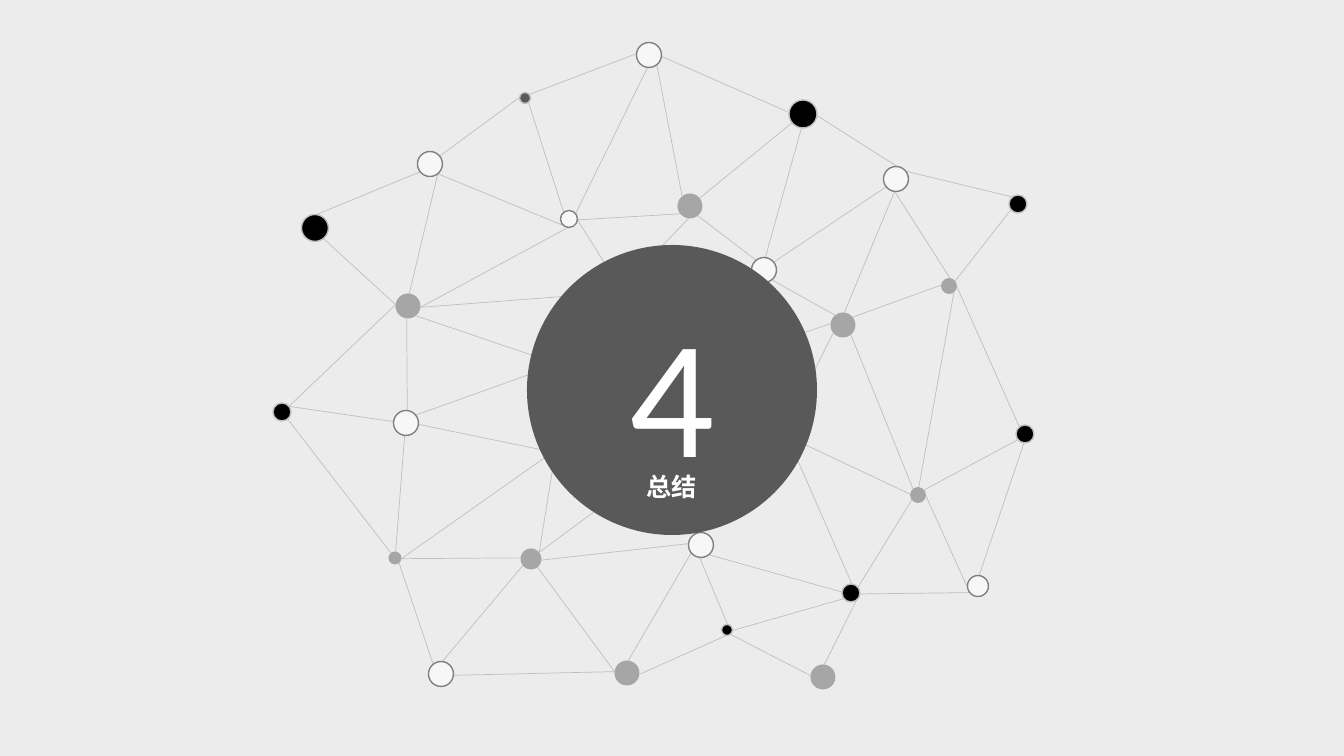
"""Build the closing section slide: a numbered disc over a network of dots."""
from dataclasses import dataclass
from math import cos, radians, sin

from lxml.etree import SubElement
from pptx import Presentation
from pptx.dml.color import RGBColor
from pptx.enum.shapes import MSO_CONNECTOR, MSO_SHAPE
from pptx.enum.text import MSO_ANCHOR, MSO_AUTO_SIZE, PP_ALIGN
from pptx.oxml.ns import qn
from pptx.util import Emu, Pt

NUMBER, TITLE = "4", "总结"
PAGE_SIZE = (1344, 756)
DISC = (672, 390, 290)
TITLE_BOX = (637, 466, 70, 40)

DOTS = {
    "A": (649, 55, 25, "white"), "B": (803, 114, 28, "black"),
    "C": (896, 179, 25, "white"), "D": (1018, 204, 18, "black"),
    "E": (1025, 434, 18, "black"), "F": (978, 586, 21, "white"),
    "G": (823, 677, 25, "grey"), "H": (727, 630, 11, "black"),
    "I": (627, 673, 25, "grey"), "J": (441, 674, 25, "white"),
    "K": (395, 558, 13, "grey"), "L": (282, 412, 18, "black"),
    "M": (315, 228, 27, "black"), "N": (430, 164, 25, "white"),
    "O": (525, 98, 11, "dark"), "P": (690, 206, 25, "grey"),
    "Q": (764, 270, 25, "white"), "R": (843, 325, 25, "grey"),
    "S": (949, 286, 16, "grey"), "T": (918, 495, 16, "grey"),
    "U": (851, 593, 18, "black"), "V": (701, 545, 25, "white"),
    "W": (531, 559, 21, "grey"), "X": (406, 423, 25, "white"),
    "Y": (408, 306, 25, "grey"), "Z": (569, 219, 17, "white"),
}
ANCHORS_UNDER_DISC = {
    "a": (621, 287, 18), "b": (785, 440, 27), "c": (627, 487, 18),
    "d": (561, 453, 17), "e": (546, 363, 11), "f": (686, 367, 25),
}
LINKS = [
    "L SE K NW", "K N X S", "X NE e SE", "W NE d SW", "T NW R SE",
    "K E W W", "c SW W NE", "S SE T N", "E S F N", "F SW T E",
    "M SE Y W", "N NE O W", "R NW Q SE", "Z E a NW", "A S Z NE",
    "B W A E", "B S Q N", "C N B E", "M N N SW", "A W O NE",
    "O SE Z NW", "C NE D NW", "S NE D SW", "C S S N", "E SW T NE",
    "J E I W", "J N W SW", "J NW K SE", "b SE U N", "b E T W",
    "T SW U NE", "F SW U E", "G N U SE", "W E V W", "H N V S",
    "H E U SW", "V SE U W", "I W W SE", "X E d W", "L NE X W",
    "Y S X N", "Y SE e NW", "N SE Y N", "N SE Z S", "L NE Y W",
    "Y E Z S", "Y E a SW", "B SW P NE", "A SE P NW", "Z E P SW",
    "a NE P S", "Q NW P SE", "C SW Q NE", "S W R NE", "C S R N",
    "R SW b N", "f E R W", "I N V SW", "I E H S", "H SE G W",
    "d W K E", "S E E NW",
]
SIDES = ["E", "SE", "S", "SW", "W", "NW", "N", "NE"]
TILT = 6.2


@dataclass(frozen=True)
class Theme:
    """Colours, line widths and type of the slide."""
    back: str = "ECECEC"
    disc: str = "595959"
    text: str = "FFFFFF"
    link: str = "BFBFBF"
    rim: str = "808080"
    white: str = "F7F7F7"
    black: str = "000000"
    grey: str = "A6A6A6"
    dark: str = "595959"
    link_width: float = 0.5
    rim_width: float = 1
    number_font: str = "Calibri"
    title_font: str = "Arial"
    number_size: int = 120
    title_size: int = 18


THEME = Theme()
RIMS = {"white": THEME.rim, "black": THEME.link, "dark": THEME.link, "grey": None}


def px(value):
    return Emu(round(value * 12192000 / PAGE_SIZE[0]))


def color(code):
    return RGBColor.from_string(code)


def write(shape, text, *, font, size, bold, anchor):
    frame = shape.text_frame
    frame.auto_size = MSO_AUTO_SIZE.NONE
    frame.word_wrap = False
    frame.margin_left = frame.margin_right = 0
    frame.vertical_anchor = anchor
    para = frame.paragraphs[0]
    para.alignment = PP_ALIGN.CENTER
    span = para.add_run()
    span.text = text
    span.font.name, span.font.size, span.font.bold = font, Pt(size), bold
    span.font.color.rgb = color(THEME.text)


def add_circle(page, x, y, size, fill, rim=None):
    circle = page.shapes.add_shape(
        MSO_SHAPE.OVAL, px(x - size / 2), px(y - size / 2), px(size), px(size))
    circle.shadow.inherit = False
    circle.fill.solid()
    circle.fill.fore_color.rgb = color(fill)
    if rim:
        circle.line.color.rgb = color(rim)
        circle.line.width = Pt(THEME.rim_width)
    else:
        circle.line.fill.background()
    return circle


def rim_point(name, side):
    x, y, size = (DOTS.get(name) or ANCHORS_UNDER_DISC[name])[:3]
    angle = radians(45 * SIDES.index(side) + TILT)
    return px(x + size / 2 * cos(angle)), px(y + size / 2 * sin(angle))


def add_link(page, link):
    start, start_side, end, end_side = link.split()
    line = page.shapes.add_connector(
        MSO_CONNECTOR.STRAIGHT, *rim_point(start, start_side), *rim_point(end, end_side))
    line.line.color.rgb = color(THEME.link)
    line.line.width = Pt(THEME.link_width)
    SubElement(line.element.spPr, qn("a:effectLst"))


def main():
    deck = Presentation()
    deck.slide_width, deck.slide_height = map(px, PAGE_SIZE)
    page = deck.slides.add_slide(deck.slide_layouts[5])
    page.background.fill.solid()
    page.background.fill.fore_color.rgb = color(THEME.back)

    for link in LINKS:
        add_link(page, link)
    for x, y, size, kind in DOTS.values():
        add_circle(page, x, y, size, getattr(THEME, kind), RIMS[kind])

    disc = add_circle(page, *DISC, THEME.disc)
    write(disc, NUMBER, font=THEME.number_font, size=THEME.number_size,
          bold=False, anchor=MSO_ANCHOR.MIDDLE)

    title = page.shapes.title
    title.left, title.top, title.width, title.height = map(px, TITLE_BOX)
    write(title, TITLE, font=THEME.title_font, size=THEME.title_size,
          bold=True, anchor=MSO_ANCHOR.TOP)
    disc.element.addnext(title.element)
    deck.save("out.pptx")


if __name__ == "__main__":
    main()
